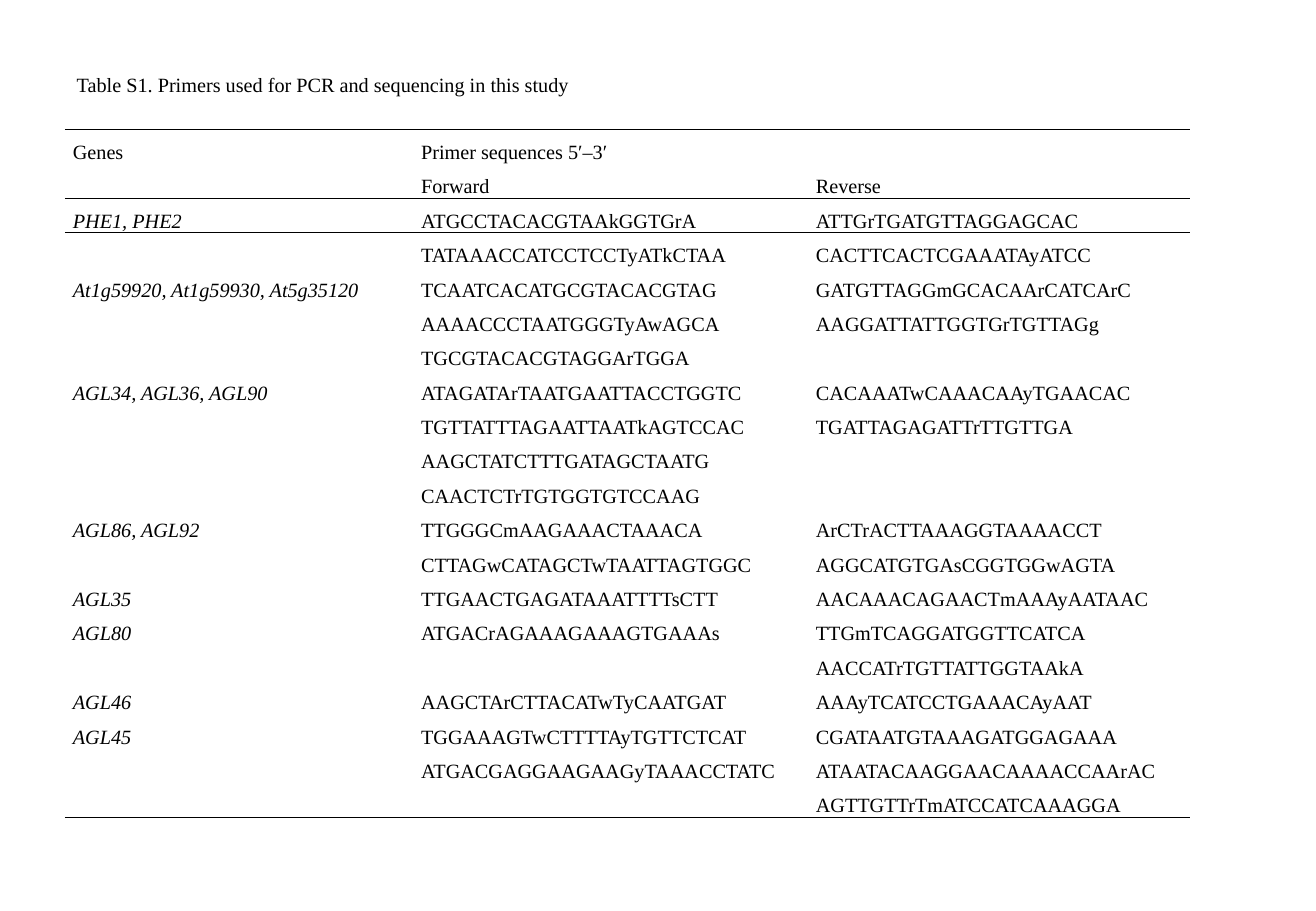
import pptx
import pptx.dml.color
import pptx.enum.text
import pptx.oxml.ns
import pptx.util
from lxml import etree

PX = 7620
BLACK = pptx.dml.color.RGBColor(0, 0, 0)
FONT = "Times New Roman"
TEXT_SIZE = pptx.util.Pt(12)
RULE_WIDTH = pptx.util.Pt(1)
PLAIN_STYLE = "{2D5ABB26-0587-4C30-8999-92F81FD0307C}"
COLUMN_WIDTHS = (344, 390, 378)
ROW_HEIGHT = 34
CELL_INSET = 8

HEADINGS = [
    ("Genes", "Primer sequences 5′–3′", ""),
    ("", "Forward", "Reverse"),
]
PRIMERS = [
    ("PHE1, PHE2", "ATGCCTACACGTAAkGGTGrA", "ATTGrTGATGTTAGGAGCAC"),
    ("", "TATAAACCATCCTCCTyATkCTAA", "CACTTCACTCGAAATAyATCC"),
    ("At1g59920, At1g59930, At5g35120", "TCAATCACATGCGTACACGTAG", "GATGTTAGGmGCACAArCATCArC"),
    ("", "AAAACCCTAATGGGTyAwAGCA", "AAGGATTATTGGTGrTGTTAGg"),
    ("", "TGCGTACACGTAGGArTGGA", ""),
    ("AGL34, AGL36, AGL90", "ATAGATArTAATGAATTACCTGGTC", "CACAAATwCAAACAAyTGAACAC"),
    ("", "TGTTATTTAGAATTAATkAGTCCAC", "TGATTAGAGATTrTTGTTGA"),
    ("", "AAGCTATCTTTGATAGCTAATG", ""),
    ("", "CAACTCTrTGTGGTGTCCAAG", ""),
    ("AGL86, AGL92", "TTGGGCmAAGAAACTAAACA", "ArCTrACTTAAAGGTAAAACCT"),
    ("", "CTTAGwCATAGCTwTAATTAGTGGC", "AGGCATGTGAsCGGTGGwAGTA"),
    ("AGL35", "TTGAACTGAGATAAATTTTsCTT", "AACAAACAGAACTmAAAyAATAAC"),
    ("AGL80", "ATGACrAGAAAGAAAGTGAAAs", "TTGmTCAGGATGGTTCATCA"),
    ("", "", "AACCATrTGTTATTGGTAAkA"),
    ("AGL46", "AAGCTArCTTACATwTyCAATGAT", "AAAyTCATCCTGAAACAyAAT"),
    ("AGL45", "TGGAAAGTwCTTTTAyTGTTCTCAT", "CGATAATGTAAAGATGGAGAAA"),
    ("", "ATGACGAGGAAGAAGyTAAACCTATC", "ATAATACAAGGAACAAAACCAArAC"),
    ("", "", "AGTTGTTrTmATCCATCAAAGGA"),
]


def add_text(paragraph, wording, italic=False):
    run = paragraph.add_run()
    run.text = wording
    run.font.name = FONT
    run.font.size = TEXT_SIZE
    run.font.italic = italic
    run.font.color.rgb = BLACK


def add_rule(cell, edge):
    properties = cell._tc.get_or_add_tcPr()
    rule = etree.SubElement(properties, pptx.oxml.ns.qn(f"a:{edge}"), w=str(RULE_WIDTH))
    fill = etree.SubElement(rule, pptx.oxml.ns.qn("a:solidFill"))
    etree.SubElement(fill, pptx.oxml.ns.qn("a:srgbClr"), val=str(BLACK))


def fill_cell(cell, wording, italic, edges):
    for edge in edges:
        add_rule(cell, edge)
    cell.fill.background()
    cell.margin_left = cell.margin_right = CELL_INSET * PX
    cell.margin_top = cell.margin_bottom = 0
    cell.vertical_anchor = pptx.enum.text.MSO_ANCHOR.BOTTOM
    paragraph = cell.text_frame.paragraphs[0]
    if wording:
        add_text(paragraph, wording, italic)
    else:
        etree.SubElement(paragraph._p, pptx.oxml.ns.qn("a:endParaRPr"), sz="1200")


def add_caption(slide, left, top, width, height):
    caption = slide.shapes.add_textbox(left * PX, top * PX, width * PX, height * PX)
    caption.text_frame.word_wrap = True
    paragraph = caption.text_frame.paragraphs[0]
    paragraph.alignment = pptx.enum.text.PP_ALIGN.JUSTIFY
    paragraph.line_spacing = 1.5
    add_text(paragraph, "Table S1. Primers used for PCR and sequencing in this study")


def add_primer_table(slide, left, top):
    rows = HEADINGS + PRIMERS
    frame = slide.shapes.add_table(
        len(rows), len(COLUMN_WIDTHS), left * PX, top * PX,
        sum(COLUMN_WIDTHS) * PX, len(rows) * ROW_HEIGHT * PX)
    primers = frame.table
    primers.first_row = primers.horz_banding = False
    primers._tbl.tblPr.find(pptx.oxml.ns.qn("a:tableStyleId")).text = PLAIN_STYLE
    for column, width in zip(primers.columns, COLUMN_WIDTHS):
        column.width = width * PX

    first_primer = len(HEADINGS)
    edges = {0: ["lnT"], first_primer - 1: ["lnB"], first_primer: ["lnT"], len(rows) - 1: ["lnB"]}
    for r, wordings in enumerate(rows):
        primers.rows[r].height = ROW_HEIGHT * PX
        for c, wording in enumerate(wordings):
            is_gene = c == 0 and r >= first_primer
            fill_cell(primers.cell(r, c), wording, is_gene, edges.get(r, []))
    primers.cell(0, 1).merge(primers.cell(0, 2))


def main():
    deck = pptx.Presentation()
    deck.slide_width = 1300 * PX
    deck.slide_height = 900 * PX
    slide = deck.slides.add_slide(deck.slide_layouts[6])
    add_primer_table(slide, 64, 128)
    add_caption(slide, 64, 53, 1087, 44)
    deck.save("out.pptx")


if __name__ == "__main__":
    main()
